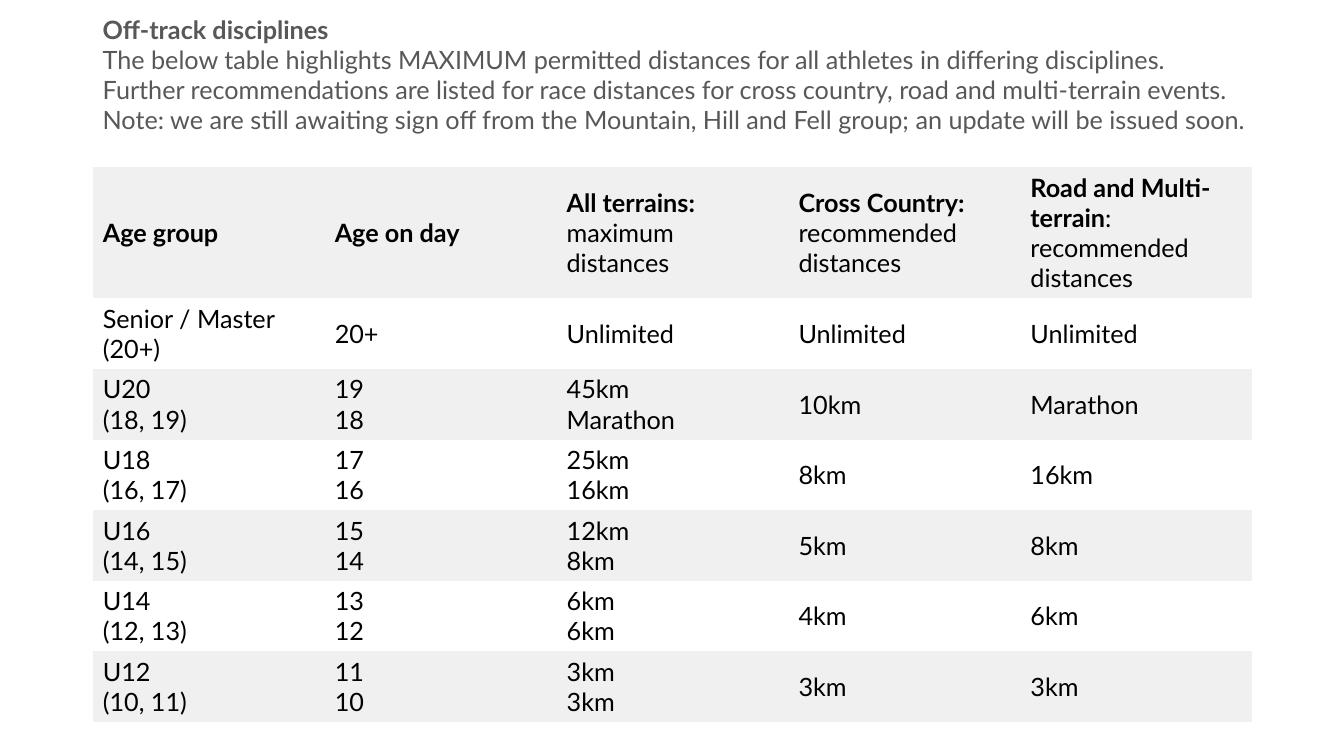
from pptx import Presentation
from pptx.dml.color import RGBColor
from pptx.enum.text import MSO_ANCHOR, MSO_AUTO_SIZE
from pptx.oxml.ns import qn
from pptx.util import Inches, Pt

INTRO = [
    [("Off-track disciplines", True)],
    [("The below table highlights MAXIMUM permitted distances for all athletes in differing disciplines.  "
      "Further recommendations are listed for race distances for cross country, road and multi-terrain events.",
      False)],
    [("Note: we are still awaiting sign off from the Mountain, Hill and Fell group; "
      "an update will be issued soon.", False)],
]
HEADER = [
    [("Age group", True)],
    [("Age on day", True)],
    [("All terrains: ", True), ("maximum distances", False)],
    [("Cross Country: ", True), ("recommended distances", False)],
    [("Road and Multi-terrain", True), (": recommended distances", False)],
]
AGE_GROUPS = [
    ("Senior / Master (20+)", "20+", "Unlimited", "Unlimited", "Unlimited"),
    ("U20\n(18, 19)", "19\n18", "45km\nMarathon", "10km", "Marathon"),
    ("U18\n(16, 17)", "17\n16", "25km\n16km", "8km", "16km"),
    ("U16\n(14, 15)", "15\n14", "12km\n8km", "5km", "8km"),
    ("U14\n(12, 13)", "13\n12", "6km\n6km", "4km", "6km"),
    ("U12\n(10, 11)", "11\n10", "3km\n3km", "3km", "3km"),
]
FONT = {"name": "Lato", "size": Pt(18)}
INTRO_COLOUR, TABLE_COLOUR, BAND_COLOUR = "57585A", "000000", "F0F0F0"
LEFT, TABLE_TOP = 0.92, 1.66
COLUMN_WIDTH, HEADER_HEIGHT, ROW_HEIGHT = 2.3, 1.3, 0.7
PLAIN_TABLE_STYLE = "{2D5ABB26-0587-4C30-8999-92F81FD0307C}"


def colour(value):
    return RGBColor.from_string(value)


def write_runs(paragraph, runs, text_colour):
    for text, bold in runs:
        for number, line in enumerate(text.split("\n")):
            if number:
                paragraph.add_line_break()
            run = paragraph.add_run()
            run.text = line
            for name, value in {**FONT, "bold": bold}.items():
                setattr(run.font, name, value)
            run.font.color.rgb = colour(text_colour)


def add_distance_table(slide):
    rows = [HEADER] + [[[(text, False)] for text in group] for group in AGE_GROUPS]
    heights = [HEADER_HEIGHT] + [ROW_HEIGHT] * len(AGE_GROUPS)
    table = slide.shapes.add_table(
        len(rows), len(HEADER), Inches(LEFT), Inches(TABLE_TOP),
        Inches(COLUMN_WIDTH * len(HEADER)), Inches(sum(heights))).table
    table.first_row = table.horz_banding = False
    table._tbl.tblPr.find(qn("a:tableStyleId")).text = PLAIN_TABLE_STYLE
    for column in table.columns:
        column.width = Inches(COLUMN_WIDTH)
    for row_number, (row, height) in enumerate(zip(rows, heights)):
        table.rows[row_number].height = Inches(height)
        for column_number, runs in enumerate(row):
            cell = table.cell(row_number, column_number)
            cell.vertical_anchor = MSO_ANCHOR.MIDDLE
            if row_number % 2 == 0:
                cell.fill.solid()
                cell.fill.fore_color.rgb = colour(BAND_COLOUR)
            else:
                cell.fill.background()
            write_runs(cell.text_frame.paragraphs[0], runs, TABLE_COLOUR)


def add_intro(slide):
    frame = slide.shapes.add_textbox(Inches(LEFT), Inches(0.09), Inches(11.61), Inches(1.92)).text_frame
    frame.word_wrap = True
    frame.auto_size = MSO_AUTO_SIZE.SHAPE_TO_FIT_TEXT
    for number, runs in enumerate(INTRO):
        paragraph = frame.add_paragraph() if number else frame.paragraphs[0]
        write_runs(paragraph, runs, INTRO_COLOUR)


def main():
    presentation = Presentation()
    presentation.slide_width, presentation.slide_height = Inches(13.33), Inches(7.5)
    slide = presentation.slides.add_slide(presentation.slide_layouts[6])
    add_distance_table(slide)
    add_intro(slide)
    presentation.save("out.pptx")


if __name__ == "__main__":
    main()
